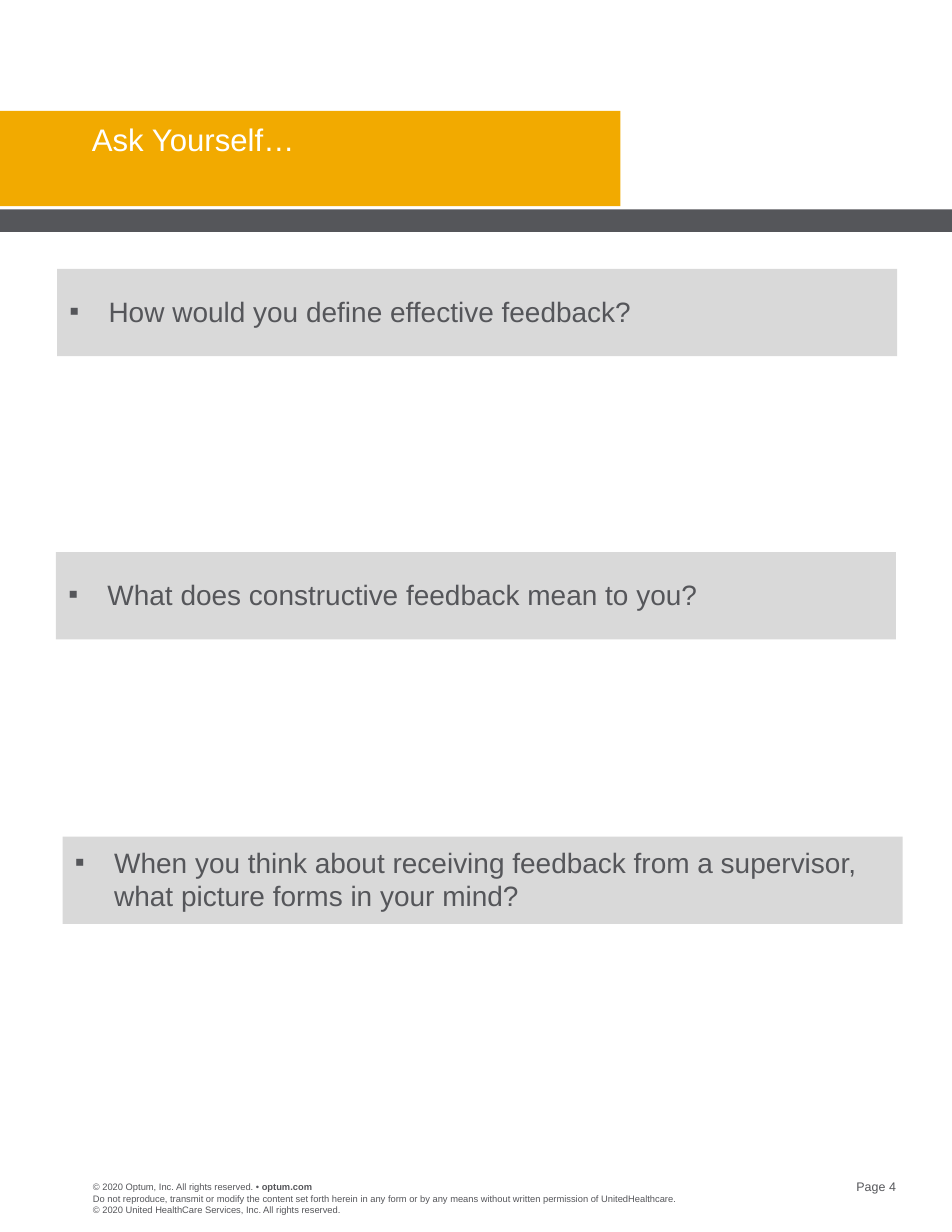
from pptx import Presentation
from pptx.dml.color import RGBColor
from pptx.enum import shapes, text
from pptx.oxml.ns import qn
from pptx.util import Inches, Pt
from lxml import etree

# Content
TITLE = "Ask Yourself…"
QUESTIONS = [  # left, top, wording
    (0.51, 2.4, "How would you define effective feedback?"),
    (0.5, 4.93, "What does constructive feedback mean to you?"),
    (0.56, 7.47, "When you think about receiving feedback from a supervisor, "
                 "what picture forms in your mind?"),
]
COPYRIGHT = [("© 2020 Optum, Inc. All rights reserved. • ", False), ("optum.com", True)]
NOTICE = [("Do not reproduce, transmit or modify the content set forth herein in any form "
           "or by any means without written permission of UnitedHealthcare. "
           "© 2020 United HealthCare Services, Inc. All rights reserved.", False)]
PAGE_LABEL = [("Page 4", False)]

THEME = {
    "font": "Arial", "grey": "55565A", "orange": "F2AA00", "panel": "D9D9D9",
    "white": "FFFFFF", "title": 20, "question": 18, "page": 8, "legal": 6,
}


def style(font, size, color, bold=False):
    font.name, font.size, font.bold = THEME["font"], Pt(THEME[size]), bold
    font.color.rgb = RGBColor.from_string(THEME[color])


def set_margins(frame, left=0, top=0, right=0, bottom=0):
    frame.margin_left, frame.margin_top = Inches(left), Inches(top)
    frame.margin_right, frame.margin_bottom = Inches(right), Inches(bottom)
    frame.word_wrap = True


def add_block(page, place, color):
    block = page.shapes.add_shape(shapes.MSO_SHAPE.RECTANGLE, *map(Inches, place))
    block.shadow.inherit = False
    block.fill.solid()
    block.fill.fore_color.rgb = RGBColor.from_string(THEME[color])
    block.line.fill.background()
    return block


def add_label(page, place, spans, size, align=text.PP_ALIGN.LEFT):
    box = page.shapes.add_textbox(*map(Inches, place))
    set_margins(box.text_frame)
    para = box.text_frame.paragraphs[0]
    para.alignment = align
    for wording, bold in spans:
        span = para.add_run()
        span.text = wording
        style(span.font, size, "grey", bold)


def add_bullet(para, indent):
    props = para._p.get_or_add_pPr()
    props.set("marL", str(Inches(indent)))
    props.set("indent", str(-Inches(indent)))
    color = etree.SubElement(props, qn("a:buClr"))
    etree.SubElement(color, qn("a:srgbClr"), val=THEME["grey"])
    etree.SubElement(props, qn("a:buFont"), typeface=THEME["font"])
    etree.SubElement(props, qn("a:buChar"), char="▪")


def add_question(page, left, top, wording):
    panel = add_block(page, (left, top, 7.5, 0.78), "panel")
    frame = panel.text_frame
    set_margins(frame, left=0.11, right=0.11, bottom=0.03)
    frame.vertical_anchor = text.MSO_ANCHOR.MIDDLE
    frame.text = wording
    para = frame.paragraphs[0]
    para.alignment = text.PP_ALIGN.LEFT
    add_bullet(para, 0.35)
    style(para.runs[0].font, "question", "grey")


def add_title(page):
    title = page.shapes.title
    title.left, title.top, title.width, title.height = map(Inches, (0.82, 1.11, 4.5, 0.3))
    frame = title.text_frame
    set_margins(frame)
    frame.vertical_anchor = text.MSO_ANCHOR.TOP
    frame.auto_size = text.MSO_AUTO_SIZE.NONE
    frame.text = TITLE
    para = frame.paragraphs[0]
    para.alignment, para.line_spacing = text.PP_ALIGN.LEFT, 0.9
    style(para.runs[0].font, "title", "white")
    # Bring the title in front of its banner
    page.shapes._spTree.append(title._element)


def main():
    deck = Presentation()
    deck.slide_width, deck.slide_height = Inches(8.5), Inches(11)
    page = deck.slides.add_slide(deck.slide_layouts[5])

    # Header
    add_block(page, (0, 0.99, 5.54, 0.85), "orange")
    add_block(page, (0, 1.87, 8.5, 0.2), "grey")
    add_title(page)

    # Questions
    for question in QUESTIONS:
        add_question(page, *question)

    # Footer
    add_label(page, (0.83, 10.55, 2, 0.1), COPYRIGHT, "legal")
    add_label(page, (0.83, 10.65, 5.26, 0.2), NOTICE, "legal")
    add_label(page, (7.19, 10.53, 0.81, 0.13), PAGE_LABEL, "page", text.PP_ALIGN.RIGHT)

    deck.save("out.pptx")


if __name__ == "__main__":
    main()
